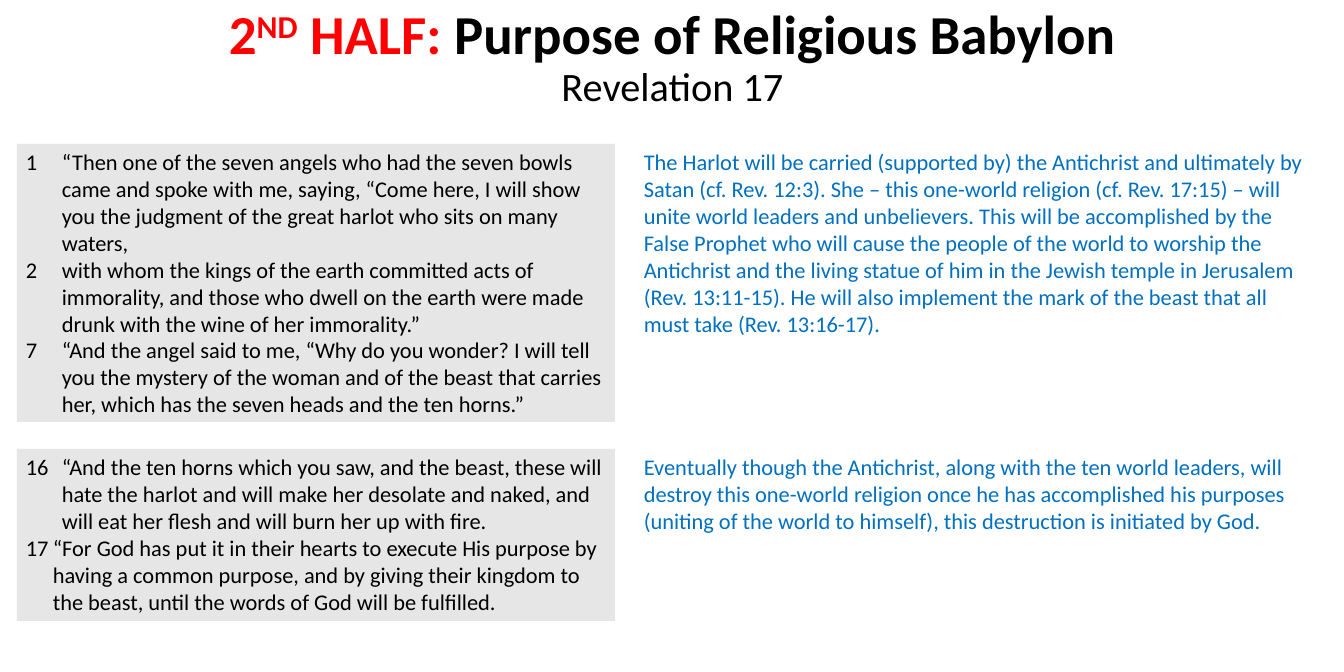
from lxml import etree
from pptx import Presentation
from pptx.dml.color import RGBColor
from pptx.enum.shapes import MSO_SHAPE
from pptx.enum.text import MSO_ANCHOR, MSO_AUTO_SIZE, PP_ALIGN
from pptx.oxml.ns import qn
from pptx.util import Pt

RECT = MSO_SHAPE.RECTANGLE
LEFT, CENTER = PP_ALIGN.LEFT, PP_ALIGN.CENTER
TOP, MIDDLE = MSO_ANCHOR.TOP, MSO_ANCHOR.MIDDLE
NO_FIT = MSO_AUTO_SIZE.NONE

EMU_PER_PX = 914400 / 89.6
FONT = "Calibri"
BLACK, RED, BLUE, GRAY = "000000", "FF0000", "0070C0", "E7E6E6"
VERSE_X, VERSE_W = 17, 598
NOTE_X, NOTE_W = 635, 683
VERSE_TAB = 27

# Each section: top, verse height, note height, verses (number, text, indent), note
SECTIONS = [
    (144, 278, 199, [
        ("1", "“Then one of the seven angels who had the seven bowls came and spoke "
              "with me, saying, “Come here, I will show you the judgment of the great "
              "harlot who sits on many waters,", 36),
        ("2", "with whom the kings of the earth committed acts of immorality, and "
              "those who dwell on the earth were made drunk with the wine of her "
              "immorality.”", 36),
        ("7", "“And the angel said to me, “Why do you wonder? I will tell you the "
              "mystery of the woman and of the beast that carries her, which has the "
              "seven heads and the ten horns.”", 36),
    ], "The Harlot will be carried (supported by) the Antichrist and ultimately by "
       "Satan (cf. Rev. 12:3). She – this one-world religion (cf. Rev. 17:15) – will "
       "unite world leaders and unbelievers. This will be accomplished by the False "
       "Prophet who will cause the people of the world to worship the Antichrist and "
       "the living statue of him in the Jewish temple in Jerusalem (Rev. 13:11-15). "
       "He will also implement the mark of the beast that all must take "
       "(Rev. 13:16-17)."),
    (449, 172, 91, [
        ("16", "“And the ten horns which you saw, and the beast, these will hate the "
               "harlot and will make her desolate and naked, and will eat her flesh "
               "and will burn her up with fire.", 36),
        ("17", "“For God has put it in their hearts to execute His purpose by having "
               "a common purpose, and by giving their kingdom to the beast, until the "
               "words of God will be fulfilled.", 27),
    ], "Eventually though the Antichrist, along with the ten world leaders, will "
       "destroy this one-world religion once he has accomplished his purposes "
       "(uniting of the world to himself), this destruction is initiated by God."),
]


def px(n):
    return round(n * EMU_PER_PX)


def rgb(color):
    return RGBColor.from_string(color)


def style_run(r, size, color, bold=False):
    r.font.name = FONT
    r.font.size = Pt(size)
    r.font.bold = bold
    r.font.color.rgb = rgb(color)


def add_run(p, text, size, color, bold=False):
    r = p.add_run()
    r.text = text
    style_run(r, size, color, bold)
    return r


def set_hanging_indent(p, indent):
    """Hang the verse number at the margin, with a tab stop before its text."""
    pPr = p._p.get_or_add_pPr()
    pPr.set("marL", str(px(indent)))
    pPr.set("indent", str(-px(indent)))
    tabs = etree.SubElement(pPr, qn("a:tabLst"))
    etree.SubElement(tabs, qn("a:tab"), pos=str(px(VERSE_TAB)), algn="l")


def set_title(slide):
    sp = slide.shapes.title
    sp.left, sp.top, sp.width, sp.height = px(41), px(0), px(1263), px(117)
    tf = sp.text_frame
    tf.auto_size = NO_FIT
    tf.word_wrap = True
    tf.vertical_anchor = MIDDLE
    p = tf.paragraphs[0]
    p.alignment = CENTER
    p.line_spacing = 0.9
    add_run(p, "2", 44.1, RED, True)
    ordinal = add_run(p, "ND", 44.1, RED, True)
    ordinal.font._element.set("baseline", "30000")
    add_run(p, " HALF: ", 44.1, RED, True)
    add_run(p, "Purpose of Religious Babylon", 44.1, BLACK, True)
    p.add_line_break()
    add_run(p, "Revelation 17", 32.4, BLACK)


def add_verses(slide, top, height, verses):
    sp = slide.shapes.add_shape(RECT, px(VERSE_X), px(top), px(VERSE_W), px(height))
    sp.shadow.inherit = False
    sp.fill.solid()
    sp.fill.fore_color.rgb = rgb(GRAY)
    sp.line.fill.background()
    tf = sp.text_frame
    tf.word_wrap = True
    tf.vertical_anchor = TOP
    tf.text = "\n".join(f"{number}\t{text}" for number, text, _ in verses)
    for p, (_, _, indent) in zip(tf.paragraphs, verses):
        p.alignment = LEFT
        set_hanging_indent(p, indent)
        style_run(p.runs[0], 18, BLACK)


def add_note(slide, top, height, text):
    sp = slide.shapes.add_textbox(px(NOTE_X), px(top), px(NOTE_W), px(height))
    tf = sp.text_frame
    tf.word_wrap = True
    tf.text = text
    style_run(tf.paragraphs[0].runs[0], 18, BLUE)


def main():
    prs = Presentation()
    prs.slide_width, prs.slide_height = px(1344), px(672)
    slide = prs.slides.add_slide(prs.slide_layouts[5])

    set_title(slide)

    # Verses on the left, commentary on the right
    for top, verse_height, note_height, verses, note in SECTIONS:
        add_verses(slide, top, verse_height, verses)
        add_note(slide, top, note_height, note)

    prs.save("out.pptx")


if __name__ == "__main__":
    main()
